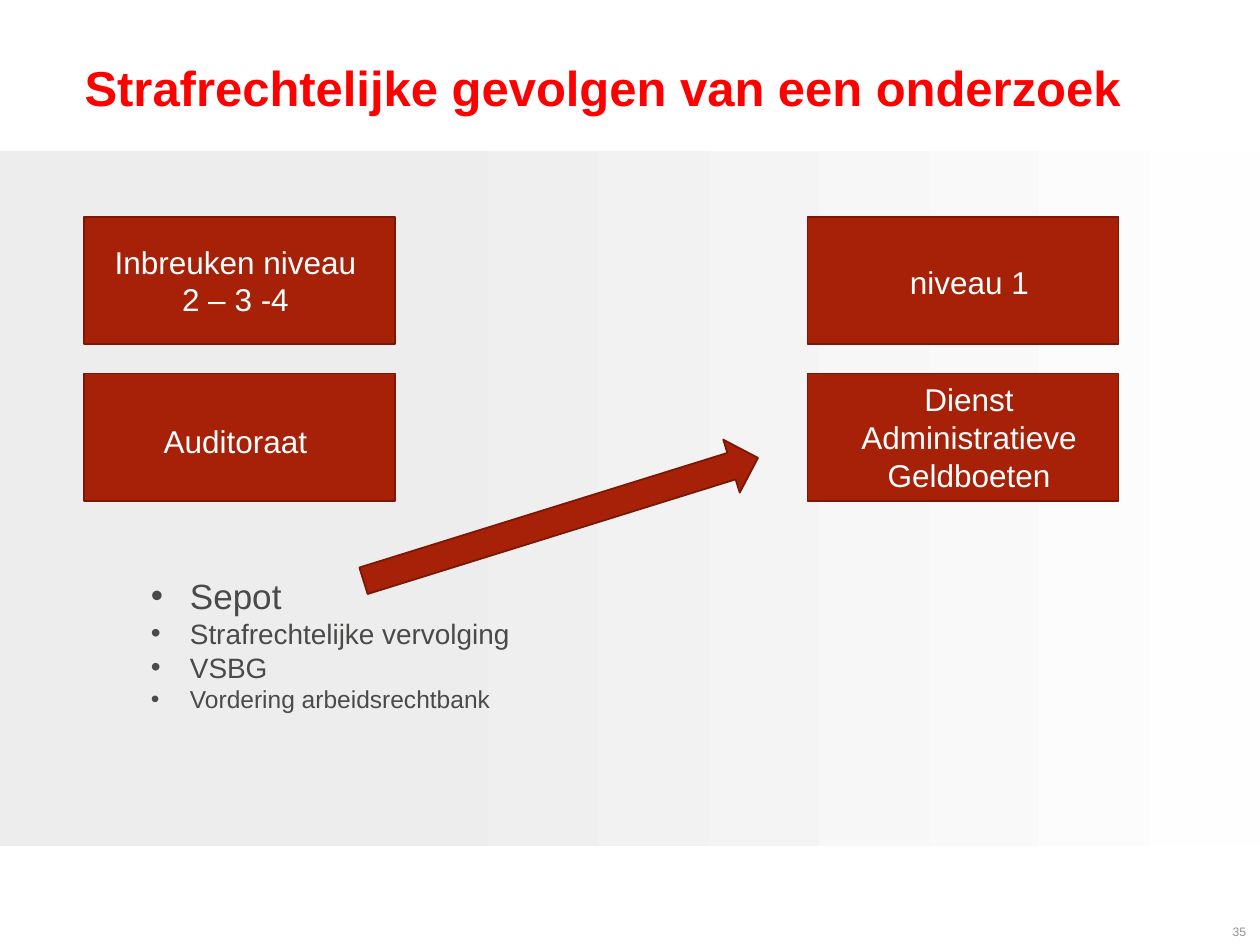
from lxml.etree import SubElement
from pptx import Presentation
from pptx.dml.color import RGBColor
from pptx.enum.shapes import MSO_SHAPE
from pptx.enum.text import MSO_ANCHOR, MSO_AUTO_SIZE, PP_ALIGN
from pptx.oxml.ns import qn
from pptx.util import Cm, Pt

FONT = "Arial"
RED, DARK_RED, WHITE = "A62107", "7B1805", "FFFFFF"
TITLE = "Strafrechtelijke gevolgen van een onderzoek"
BOX_WIDTH, BOX_HEIGHT = 6.27, 2.57
COLUMNS = (1.7, 16.28)
ROWS = (4.37, 7.53)
BOX_TEXTS = {(0, 0): ["Inbreuken niveau ", "2 – 3 -4 "]}
LABELS = [
    ("Auditoraat", (3.05, 8.38, 7.32, 1.02), PP_ALIGN.LEFT),
    ("niveau 1", (16.79, 5.18, 5.51, 1.02), PP_ALIGN.CENTER),
    ("Dienst Administratieve Geldboeten", (16.64, 7.54, 5.79, 2.57), PP_ALIGN.CENTER),
]
OUTCOMES = [
    ("Sepot", 20),
    ("Strafrechtelijke vervolging", 16),
    ("VSBG", 16),
    ("Vordering arbeidsrechtbank", 14),
]


def color(value):
    return RGBColor.from_string(value)


def place(left, top, width, height):
    return Cm(left), Cm(top), Cm(width), Cm(height)


def write(paragraph, text, size, ink, align=PP_ALIGN.LEFT, bold=False):
    paragraph.alignment = align
    run = paragraph.add_run()
    run.text = text
    run.font.name = FONT
    run.font.size = Pt(size)
    run.font.bold = bold
    run.font.color.rgb = color(ink)


def add_paragraph(frame, index):
    return frame.add_paragraph() if index else frame.paragraphs[0]


def add_text_box(slide, position):
    frame = slide.shapes.add_textbox(*place(*position)).text_frame
    frame.word_wrap = True
    return frame


def add_red_shape(slide, kind, position):
    shape = slide.shapes.add_shape(kind, *place(*position))
    shape.shadow.inherit = False
    shape.fill.solid()
    shape.fill.fore_color.rgb = color(RED)
    shape.line.color.rgb = color(DARK_RED)
    shape.line.width = Pt(1)
    return shape


def add_bullet(paragraph):
    properties = paragraph._p.get_or_add_pPr()
    properties.set("marL", str(Cm(0.79)))
    properties.set("indent", str(-Cm(0.79)))
    SubElement(properties, qn("a:buFont"), typeface=FONT)
    SubElement(properties, qn("a:buChar"), char="•")


def add_band(slide):
    band = slide.shapes.add_shape(MSO_SHAPE.RECTANGLE, *place(0, 3.05, 25.4, 14))
    band.shadow.inherit = False
    band.line.fill.background()
    band.fill.gradient()
    band.fill.gradient_angle = 0
    for stop, (position, ink) in zip(band.fill.gradient_stops, [(0.3, "EDEDED"), (1, "FEFEFE")]):
        stop.position = position
        stop.color.rgb = color(ink)


def add_title(slide):
    title = slide.shapes.title
    title.left, title.top, title.width, title.height = place(1.45, 1.02, 22.66, 1.6)
    frame = title.text_frame
    frame.auto_size = MSO_AUTO_SIZE.NONE
    frame.word_wrap = True
    frame.vertical_anchor = MSO_ANCHOR.MIDDLE
    frame.paragraphs[0].line_spacing = 0.9
    write(frame.paragraphs[0], TITLE, 28, "FF0000", bold=True)


def main():
    presentation = Presentation()
    presentation.slide_width, presentation.slide_height = Cm(25.4), Cm(19.05)
    slide = presentation.slides.add_slide(presentation.slide_layouts[5])
    add_band(slide)
    add_title(slide)

    number = add_text_box(slide, (24.1, 18.03, 1.27, 1.02))
    number.vertical_anchor = MSO_ANCHOR.BOTTOM
    write(number.paragraphs[0], "35", 7, "929497", PP_ALIGN.RIGHT)

    outcomes = add_text_box(slide, (2.79, 11.46, 10.39, 3.18))
    for index, (text, size) in enumerate(OUTCOMES):
        paragraph = add_paragraph(outcomes, index)
        add_bullet(paragraph)
        write(paragraph, text, size, "4A4A49")

    for column, left in enumerate(COLUMNS):
        for row, top in enumerate(ROWS):
            box = add_red_shape(slide, MSO_SHAPE.RECTANGLE, (left, top, BOX_WIDTH, BOX_HEIGHT))
            box.text_frame.vertical_anchor = MSO_ANCHOR.MIDDLE
            for index, text in enumerate(BOX_TEXTS.get((column, row), [])):
                write(add_paragraph(box.text_frame, index), text, 18, WHITE, PP_ALIGN.CENTER)

    for text, position, align in LABELS:
        write(add_text_box(slide, position).paragraphs[0], text, 18, WHITE, align)

    arrow = add_red_shape(slide, MSO_SHAPE.RIGHT_ARROW, (7.14, 9.91, 8.33, 1.12))
    arrow.rotation = 342.7

    presentation.save("out.pptx")


if __name__ == "__main__":
    main()
